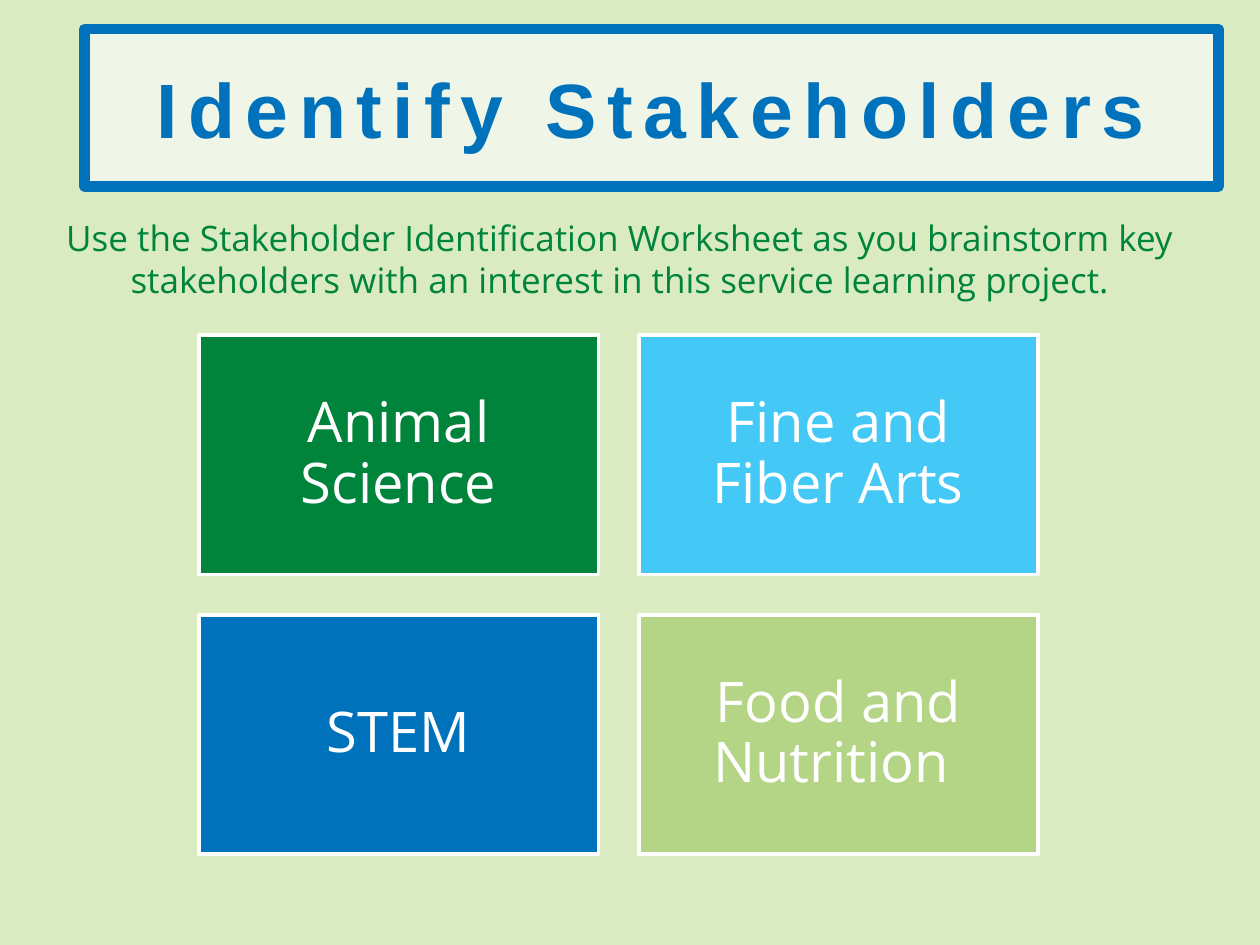
from pptx import Presentation
from pptx.dml.color import RGBColor
from pptx.enum.shapes import MSO_SHAPE
from pptx.enum.text import MSO_ANCHOR, PP_ALIGN
from pptx.util import Inches, Pt

# Content
TITLE = "Identify Stakeholders"
PROMPT = ("Use the Stakeholder Identification Worksheet as you brainstorm key "
          "stakeholders with an interest in this service learning project.")
GROUPS = [
    [("Animal Science", "green"), ("Fine and Fiber Arts", "sky")],
    [("STEM", "blue"), ("Food and Nutrition ", "lime")],
]
COLORS = {
    "background": "DAEBC1", "panel": "F0F6E7", "white": "FFFFFF",
    "green": "00833B", "sky": "44C8F5", "blue": "0072BC", "lime": "B4D486",
}

# Grid of stakeholder cards, in inches
GRID_LEFT, GRID_TOP = 1.58, 2.66
CARD_WIDTH, CARD_HEIGHT = 3.17, 1.9
GAP = 0.32


def color(name):
    return RGBColor.from_string(COLORS[name])


def write(box, text, font, size, ink, margin=None):
    frame = box.text_frame
    frame.word_wrap = True
    if margin is not None:
        frame.margin_left = frame.margin_right = Inches(margin)
        frame.margin_top = frame.margin_bottom = Inches(margin)
    para = frame.paragraphs[0]
    para.alignment = PP_ALIGN.CENTER
    span = para.add_run()
    span.text = text
    span.font.name = font
    span.font.size = Pt(size)
    span.font.color.rgb = color(ink)
    return para, span


def add_panel(page, place, fill, line, line_width):
    panel = page.shapes.add_shape(MSO_SHAPE.RECTANGLE, *map(Inches, place))
    panel.shadow.inherit = False
    panel.fill.solid()
    panel.fill.fore_color.rgb = color(fill)
    panel.line.color.rgb = color(line)
    panel.line.width = Pt(line_width)
    panel.text_frame.vertical_anchor = MSO_ANCHOR.MIDDLE
    return panel


def main():
    deck = Presentation()
    deck.slide_width, deck.slide_height = Inches(10), Inches(7.5)
    page = deck.slides.add_slide(deck.slide_layouts[6])
    page.background.fill.solid()
    page.background.fill.fore_color.rgb = color("background")

    # Title panel with widely spaced letters
    banner = add_panel(page, (0.67, 0.23, 9, 1.25), "panel", "blue", 6)
    _, span = write(banner, TITLE, "Arial", 44, "blue")
    span.font.bold = True
    span.font._element.set("spc", "600")

    # Prompt
    prompt = page.shapes.add_textbox(*map(Inches, (0.42, 1.67, 9, 0.85)))
    para, _ = write(prompt, PROMPT, "Open Sans", 20, "green")
    para.space_before = Pt(4)

    # Stakeholder cards
    for row, groups in enumerate(GROUPS):
        for column, (name, fill) in enumerate(groups):
            left = GRID_LEFT + column * (CARD_WIDTH + GAP)
            top = GRID_TOP + row * (CARD_HEIGHT + GAP)
            card = add_panel(page, (left, top, CARD_WIDTH, CARD_HEIGHT),
                             fill, "white", 2)
            para, _ = write(card, name, "Open Sans", 32, "white", margin=0.13)
            para.line_spacing = 0.9

    deck.save("out.pptx")


if __name__ == "__main__":
    main()
